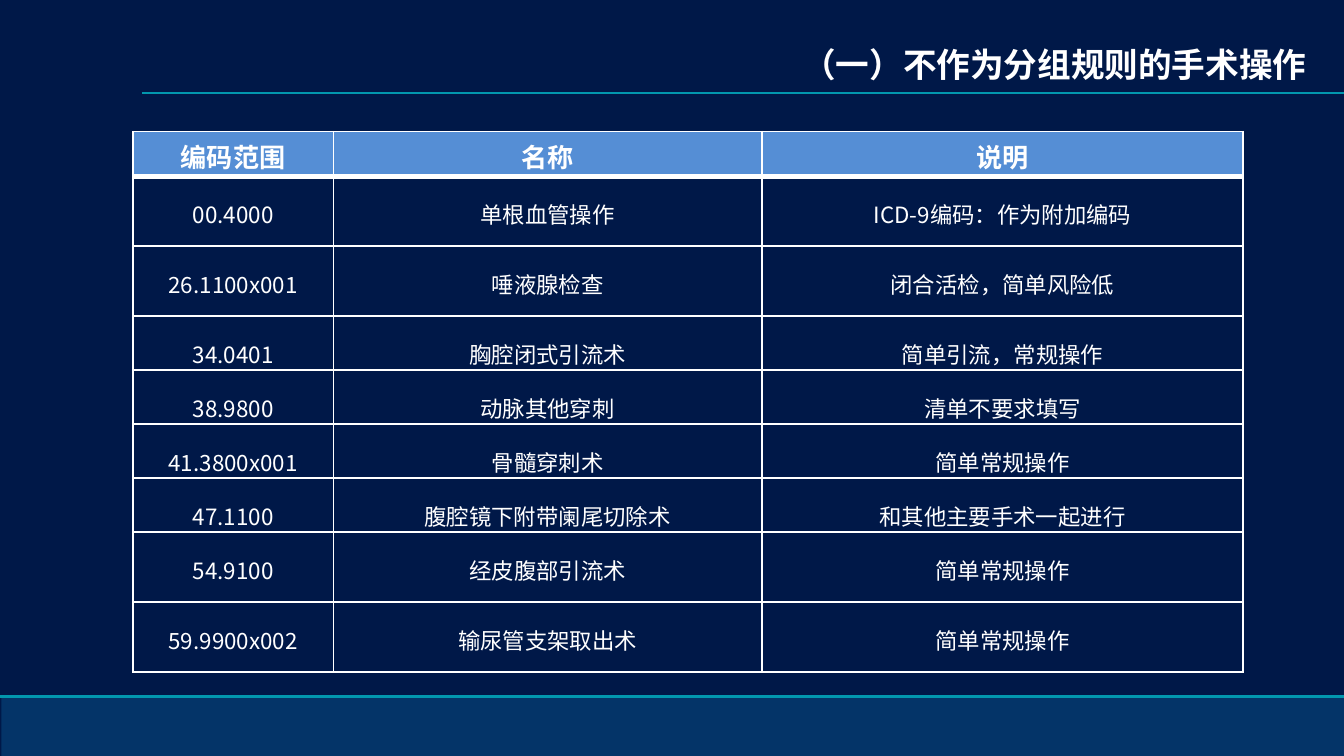
from lxml.etree import SubElement
from pptx import Presentation
from pptx.dml.color import RGBColor
from pptx.enum.shapes import MSO_CONNECTOR, MSO_SHAPE
from pptx.enum.text import MSO_ANCHOR, PP_ALIGN
from pptx.oxml.ns import qn
from pptx.util import Inches, Pt

NAVY = RGBColor(0x00, 0x18, 0x48)
FOOTER_BLUE = RGBColor(0x04, 0x34, 0x68)
TEAL = RGBColor(0x02, 0x97, 0xAE)
HEADER_BLUE = RGBColor(0x55, 0x8E, 0xD5)
WHITE = RGBColor(0xFF, 0xFF, 0xFF)
FONT = "Noto Sans CJK SC"

SLIDE_WIDTH = 10
SLIDE_HEIGHT = SLIDE_WIDTH * 9 / 16
COLUMN_WIDTHS = [1.49, 3.19, 3.58]
ROW_HEIGHTS = [0.33, 0.52, 0.52, 0.4, 0.4, 0.4, 0.4, 0.52, 0.52]
PROCEDURES = [
    ("编码范围", "名称", "说明"),
    ("00.4000", "单根血管操作", "ICD-9编码：作为附加编码"),
    ("26.1100x001", "唾液腺检查", "闭合活检，简单风险低"),
    ("34.0401", "胸腔闭式引流术", "简单引流，常规操作"),
    ("38.9800", "动脉其他穿刺", "清单不要求填写"),
    ("41.3800x001", "骨髓穿刺术", "简单常规操作"),
    ("47.1100", "腹腔镜下附带阑尾切除术", "和其他主要手术一起进行"),
    ("54.9100", "经皮腹部引流术", "简单常规操作"),
    ("59.9900x002", "输尿管支架取出术", "简单常规操作"),
]


def write_text(frame, text, size, bold, alignment):
    paragraph = frame.paragraphs[0]
    paragraph.alignment = alignment
    span = paragraph.add_run()
    span.text = text
    span.font.name = FONT
    span.font.size = Pt(size)
    span.font.bold = bold
    span.font.color.rgb = WHITE
    east_asian = SubElement(span.font._element, qn("a:ea"))
    east_asian.set("typeface", FONT)
    return paragraph


def add_footer_band(page):
    band = page.shapes.add_shape(
        MSO_SHAPE.RECTANGLE, Inches(0.01), Inches(5.19), Inches(9.99), Inches(0.45))
    band.shadow.inherit = False
    band.fill.solid()
    band.fill.fore_color.rgb = FOOTER_BLUE
    band.line.fill.background()


def add_rule(page, left, top, width):
    rule = page.shapes.add_connector(
        MSO_CONNECTOR.STRAIGHT, Inches(left), Inches(top),
        Inches(SLIDE_WIDTH), Inches(top))
    rule.line.color.rgb = TEAL
    rule.line.width = Pt(width)
    SubElement(rule._element.spPr, qn("a:effectLst"))


def set_title(page, text):
    title = page.shapes.title
    title.left, title.top = Inches(2.17), Inches(0.28)
    title.width, title.height = Inches(7.65), Inches(0.4)
    title.text_frame.word_wrap = True
    title.text_frame.vertical_anchor = MSO_ANCHOR.MIDDLE
    write_text(title.text_frame, text, 18, True, PP_ALIGN.RIGHT)


def set_borders(cell, top, bottom):
    """Draw white cell borders; top and bottom are widths in points."""
    properties = cell._tc.get_or_add_tcPr()
    for tag, width in (("lnL", 1), ("lnR", 1), ("lnT", top), ("lnB", bottom)):
        line = SubElement(properties, qn(f"a:{tag}"), w=str(Pt(width)))
        fill = SubElement(line, qn("a:solidFill"))
        SubElement(fill, qn("a:srgbClr"), val=str(WHITE))


def format_cell(cell, text, row_index):
    is_header = row_index == 0
    cell.margin_top, cell.margin_bottom = Inches(0.04), 0
    cell.vertical_anchor = MSO_ANCHOR.TOP
    set_borders(cell, 3 if row_index == 1 else 1, 3 if is_header else 1)
    if is_header:
        cell.fill.solid()
        cell.fill.fore_color.rgb = HEADER_BLUE
    else:
        cell.fill.background()
    paragraph = write_text(
        cell.text_frame, text, 14 if is_header else 12, is_header, PP_ALIGN.CENTER)
    if not is_header:
        paragraph.line_spacing = 1.5


def add_procedure_table(page):
    table = page.shapes.add_table(
        len(PROCEDURES), len(COLUMN_WIDTHS), Inches(0.99), Inches(0.98),
        Inches(sum(COLUMN_WIDTHS)), Inches(sum(ROW_HEIGHTS))).table
    table.horz_banding = False
    for column, width in zip(table.columns, COLUMN_WIDTHS):
        column.width = Inches(width)
    for row_index, (height, texts) in enumerate(zip(ROW_HEIGHTS, PROCEDURES)):
        table.rows[row_index].height = Inches(height)
        for column_index, text in enumerate(texts):
            format_cell(table.cell(row_index, column_index), text, row_index)


def main():
    deck = Presentation()
    deck.slide_width, deck.slide_height = Inches(SLIDE_WIDTH), Inches(SLIDE_HEIGHT)
    page = deck.slides.add_slide(deck.slide_layouts[5])
    page.background.fill.solid()
    page.background.fill.fore_color.rgb = NAVY
    add_footer_band(page)
    add_rule(page, 1.06, 0.69, 1)
    add_rule(page, 0, 5.18, 1.5)
    set_title(page, "（一）不作为分组规则的手术操作")
    add_procedure_table(page)
    deck.save("out.pptx")


if __name__ == "__main__":
    main()
